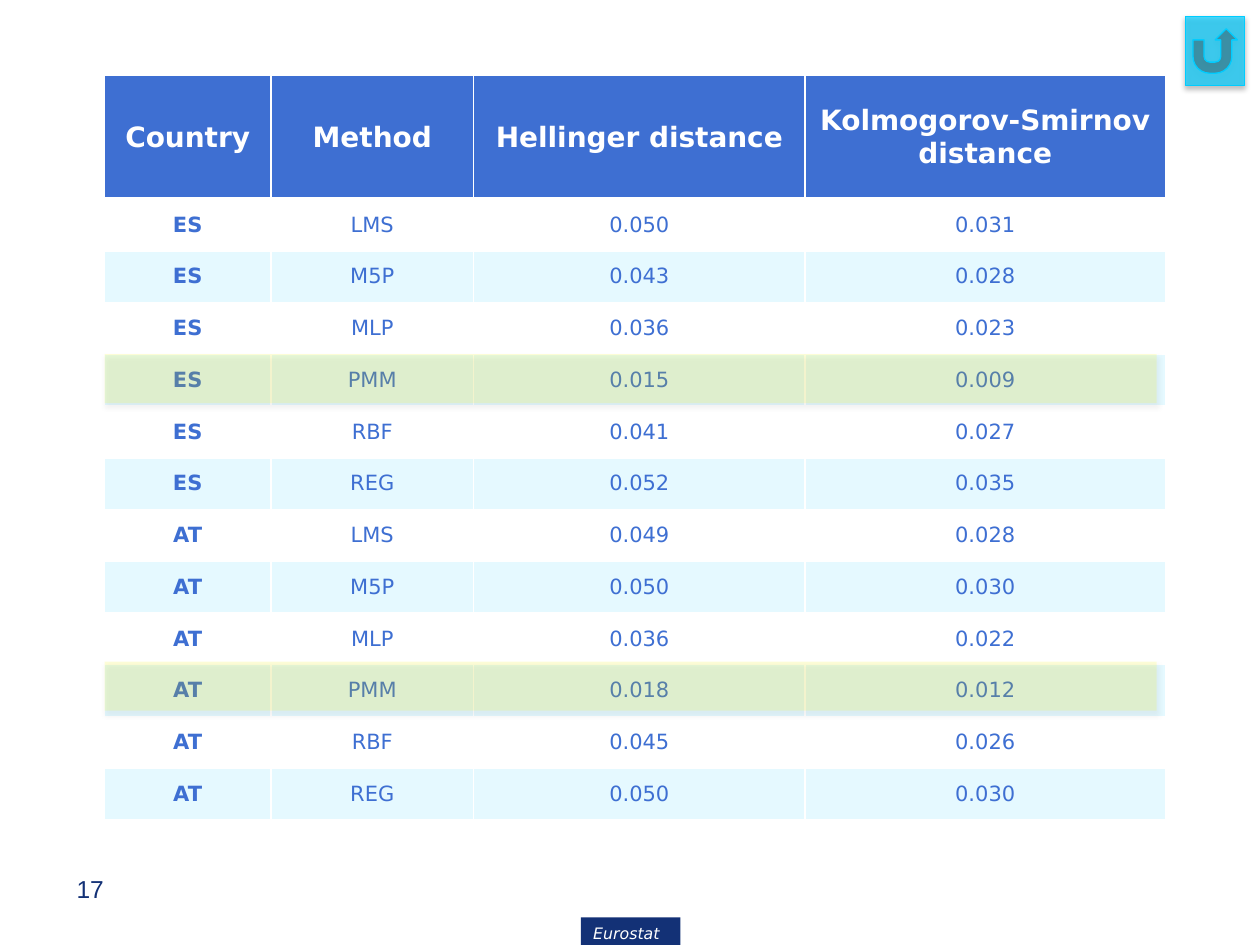
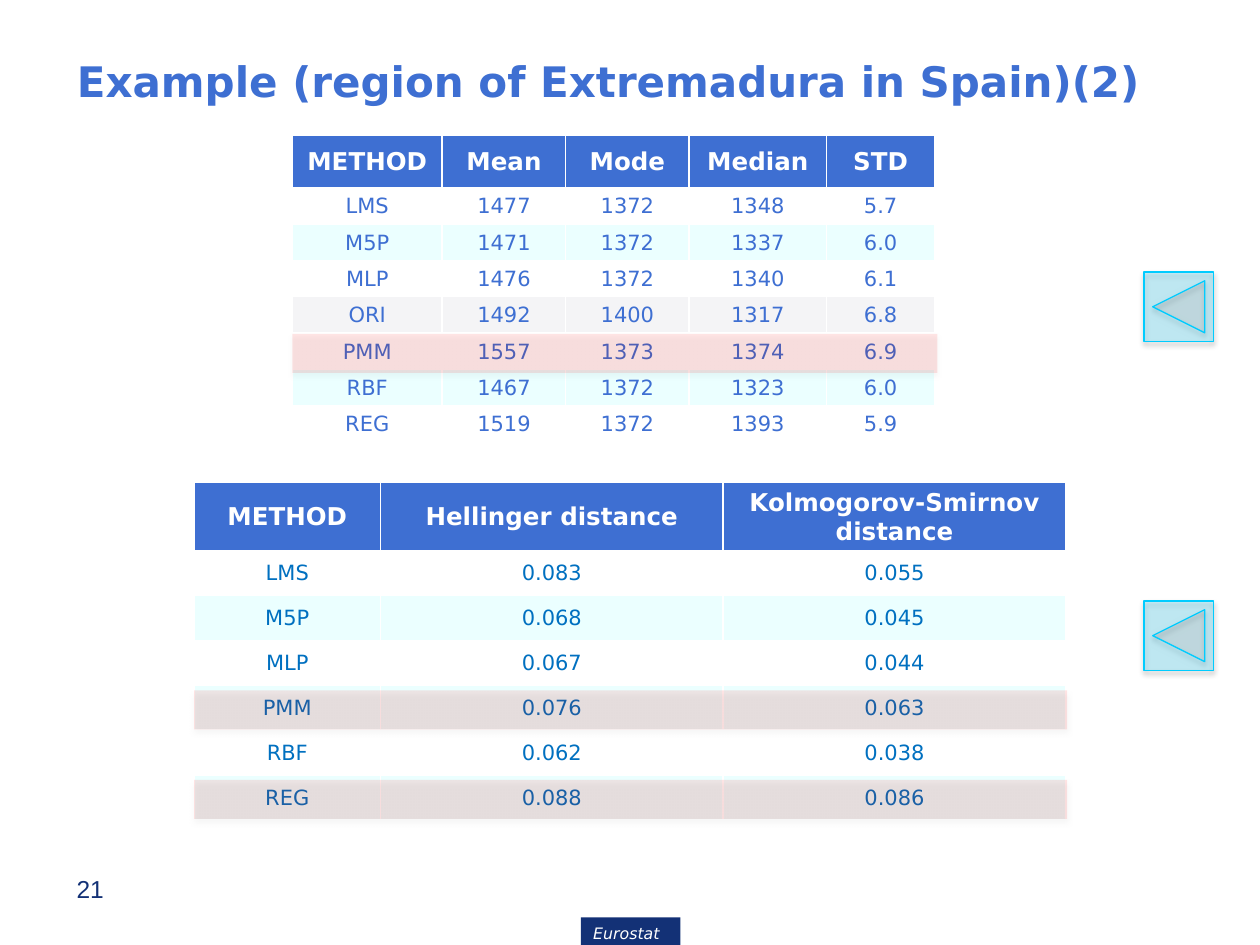
from dataclasses import dataclass

from lxml.etree import SubElement
from pptx import Presentation
from pptx.dml.color import RGBColor
from pptx.enum.shapes import MSO_SHAPE as Preset
from pptx.enum.text import MSO_ANCHOR as Anchor, MSO_AUTO_SIZE as AutoSize, PP_ALIGN as Align
from pptx.oxml.ns import qn
from pptx.util import Inches, Pt

NO_TABLE_STYLE = "{2D5ABB26-0587-4C30-8999-92F81FD0307C}"
TITLE_ONLY, BLANK = 5, 6


@dataclass(frozen=True)
class Theme:
    font: str = "DejaVu Sans"
    number_font: str = "Arial"
    blue: str = "3E6FD2"
    deep_blue: str = "0070C0"
    navy: str = "133176"
    cyan: str = "00CCFF"
    ice: str = "EBFFFF"
    mist: str = "F4F4F6"
    yellow: str = "FFFF00"
    red: str = "FF0000"
    white: str = "FFFFFF"
    black: str = "000000"
    title_size: int = 24
    large_header_size: int = 16
    header_size: int = 14
    body_size: int = 12
    number_size: int = 14
    footer_size: int = 9


@dataclass(frozen=True)
class TableLook:
    header_size: int
    text_color: str
    bands: dict
    band_alpha: int = 100
    margins: tuple = (0.1, 0.1, 0.1, 0)
    header_rule: int = 1
    bold_first_column: bool = False


class SlideBuilder:
    columns = 100
    rows = 75

    def __init__(self, theme):
        self.theme = theme
        self.deck = Presentation()
        self.deck.slide_width = Inches(10)
        self.deck.slide_height = Inches(7.5)
        self.slide = None

    def across(self, count):
        return round(self.deck.slide_width * count / self.columns)

    def down(self, count):
        return round(self.deck.slide_height * count / self.rows)

    def place(self, left, top, width, height):
        return self.across(left), self.down(top), self.across(width), self.down(height)

    def new_slide(self, layout):
        self.slide = self.deck.slides.add_slide(self.deck.slide_layouts[layout])

    def paint(self, fill, properties, color, alpha=100):
        fill.solid()
        fill.fore_color.rgb = RGBColor.from_string(color)
        if alpha < 100:
            shade = properties.find(qn("a:solidFill"))[0]
            SubElement(shade, qn("a:alpha"), val=str(alpha * 1000))

    def add_span(self, para, text, size, color, font=None, bold=False, italic=False):
        span = para.add_run()
        span.text = text
        span.font.name = font or self.theme.font
        span.font.size = Pt(size)
        span.font.bold = bold
        span.font.italic = italic
        span.font.color.rgb = RGBColor.from_string(color)

    def title(self, text):
        box = self.slide.shapes.title
        box.left, box.top, box.width, box.height = self.place(5.1, 1.3, 90, 10.2)
        frame = box.text_frame
        frame.auto_size = AutoSize.NONE
        frame.vertical_anchor = Anchor.MIDDLE
        para = frame.paragraphs[0]
        para.alignment = Align.LEFT
        indent = self.across(3.9)
        properties = para._p.get_or_add_pPr()
        properties.set("marL", str(indent))
        properties.set("indent", str(-indent))
        self.add_span(para, text, self.theme.title_size, self.theme.blue, bold=True)

    def page_number(self, number):
        box = self.slide.shapes.add_textbox(*self.place(5.1, 68.9, 23.3, 5.2))
        box.text_frame.word_wrap = True
        self.add_span(box.text_frame.paragraphs[0], str(number), self.theme.number_size,
                      self.theme.navy, self.theme.number_font)

    def shape(self, preset, area, color, alpha=100, line=None, shadow=False):
        shape = self.slide.shapes.add_shape(preset, *self.place(*area))
        shape.shadow.inherit = False
        properties = shape.element.spPr
        self.paint(shape.fill, properties, color, alpha)
        if line:
            shape.line.color.rgb = RGBColor.from_string(line)
            shape.line.width = Pt(0.75)
        else:
            shape.line.fill.background()
        if shadow:
            outer = SubElement(properties.find(qn("a:effectLst")), qn("a:outerShdw"),
                               blurRad=str(Pt(3.1)), dist=str(Pt(1.8)), dir="5400000", rotWithShape="0")
            shade = SubElement(outer, qn("a:srgbClr"), val=self.theme.black)
            SubElement(shade, qn("a:alpha"), val="35000")
        return shape

    def highlight(self, area, color, alpha):
        self.shape(Preset.RECTANGLE, area, color, alpha, shadow=True)

    def button(self, preset, area, alpha):
        self.shape(preset, area, self.theme.cyan, alpha, line=self.theme.cyan, shadow=True)

    def footer(self):
        band = self.shape(Preset.RECTANGLE, (46.1, 72.8, 7.9, 2.5), self.theme.navy)
        frame = band.text_frame
        frame.word_wrap = True
        frame.auto_size = AutoSize.SHAPE_TO_FIT_TEXT
        frame.vertical_anchor = Anchor.TOP
        para = frame.paragraphs[0]
        para.alignment = Align.LEFT
        self.add_span(para, "Eurostat", self.theme.footer_size, self.theme.white, italic=True)

    def borders(self, cell, bottom):
        properties = cell._tc.get_or_add_tcPr()
        for side, width in (("L", 1), ("R", 1), ("T", 1), ("B", bottom)):
            line = SubElement(properties, qn(f"a:ln{side}"), w=str(Pt(width)))
            SubElement(SubElement(line, qn("a:solidFill")), qn("a:srgbClr"), val=self.theme.white)

    def cell(self, cell, text, look, row, column):
        header = row == 0
        left, top, right, bottom = look.margins
        cell.margin_left, cell.margin_right = self.across(left), self.across(right)
        cell.margin_top, cell.margin_bottom = self.down(top), self.down(bottom)
        cell.vertical_anchor = Anchor.MIDDLE
        self.borders(cell, look.header_rule if header else 1)
        properties = cell._tc.tcPr
        if header:
            self.paint(cell.fill, properties, self.theme.blue)
        elif row in look.bands:
            self.paint(cell.fill, properties, look.bands[row], look.band_alpha)
        else:
            cell.fill.background()
        para = cell.text_frame.paragraphs[0]
        para.alignment = Align.CENTER
        size = look.header_size if header else self.theme.body_size
        color = self.theme.white if header else look.text_color
        bold = header or (look.bold_first_column and column == 0)
        self.add_span(para, text, size, color, bold=bold)

    def table(self, area, widths, header_height, records, look):
        frame = self.slide.shapes.add_table(len(records), len(widths), *self.place(*area))
        table = frame.table
        table.horz_banding = False
        table._tbl.tblPr.find(qn("a:tableStyleId")).text = NO_TABLE_STYLE
        for column, width in zip(table.columns, widths):
            column.width = self.across(width)
        body_height = (area[3] - header_height) / (len(records) - 1)
        for index, record in enumerate(records):
            table.rows[index].height = self.down(body_height if index else header_height)
            for column, text in enumerate(record):
                self.cell(table.cell(index, column), text, look, index, column)


COUNTRY_DISTANCES = [
    ("Country", "Method", "Hellinger distance", "Kolmogorov-Smirnov distance"),
    ("ES", "LMS", "0.050", "0.031"),
    ("ES", "M5P", "0.043", "0.028"),
    ("ES", "MLP", "0.036", "0.023"),
    ("ES", "PMM", "0.015", "0.009"),
    ("ES", "RBF", "0.041", "0.027"),
    ("ES", "REG", "0.052", "0.035"),
    ("AT", "LMS", "0.049", "0.028"),
    ("AT", "M5P", "0.050", "0.030"),
    ("AT", "MLP", "0.036", "0.022"),
    ("AT", "PMM", "0.018", "0.012"),
    ("AT", "RBF", "0.045", "0.026"),
    ("AT", "REG", "0.050", "0.030"),
]

REGION_STATISTICS = [
    ("METHOD", "Mean", "Mode", "Median", "STD"),
    ("LMS", "1477", "1372", "1348", "5.7"),
    ("M5P", "1471", "1372", "1337", "6.0"),
    ("MLP", "1476", "1372", "1340", "6.1"),
    ("ORI", "1492", "1400", "1317", "6.8"),
    ("PMM", "1557", "1373", "1374", "6.9"),
    ("RBF", "1467", "1372", "1323", "6.0"),
    ("REG", "1519", "1372", "1393", "5.9"),
]

REGION_DISTANCES = [
    ("METHOD", "Hellinger distance", "Kolmogorov-Smirnov distance"),
    ("LMS", "0.083", "0.055"),
    ("M5P", "0.068", "0.045"),
    ("MLP", "0.067", "0.044"),
    ("PMM", "0.076", "0.063"),
    ("RBF", "0.062", "0.038"),
    ("REG", "0.088", "0.086"),
]


def country_slide(builder):
    theme = builder.theme
    builder.new_slide(BLANK)
    builder.page_number(17)
    look = TableLook(theme.large_header_size, theme.blue,
                     {row: theme.cyan for row in range(2, 13, 2)}, band_alpha=10,
                     margins=(0.7, 0, 0.7, 0), header_rule=3, bold_first_column=True)
    builder.table((8.3, 6, 84.3, 59.1), (13.2, 16.1, 26.3, 28.6), 9.8, COUNTRY_DISTANCES, look)
    for top in (28.1, 52.5):
        builder.highlight((8.3, top, 83.5, 3.9), theme.yellow, 15)
    builder.footer()
    builder.button(Preset.ACTION_BUTTON_RETURN, (94.1, 1.3, 4.7, 5.5), 69)


def region_slide(builder):
    theme = builder.theme
    builder.new_slide(TITLE_ONLY)
    builder.title("Example (region of Extremadura in Spain)(2)")
    builder.page_number(21)
    statistics_look = TableLook(theme.header_size, theme.blue,
                                {2: theme.ice, 4: theme.mist, 6: theme.ice})
    builder.table((23.2, 10.7, 51.2, 24.4), (11.9, 9.8, 9.8, 10.9, 8.6), 4.2,
                  REGION_STATISTICS, statistics_look)
    distances_look = TableLook(theme.header_size, theme.deep_blue,
                               {row: theme.ice for row in (2, 4, 6)})
    builder.table((15.4, 38.3, 69.3, 26.8), (14.8, 27.2, 27.2), 5.4,
                  REGION_DISTANCES, distances_look)
    for left, top, width in ((23.2, 26.5, 51.2), (15.4, 54.8, 69.3), (15.4, 61.9, 69.3)):
        builder.highlight((left, top, width, 3.1), theme.red, 10)
    builder.footer()
    for top in (21.6, 47.7):
        builder.button(Preset.ACTION_BUTTON_BACK_OR_PREVIOUS, (90.8, top, 5.5, 5.5), 20)


def main():
    builder = SlideBuilder(Theme())
    country_slide(builder)
    region_slide(builder)
    builder.deck.save("out.pptx")


if __name__ == "__main__":
    main()
